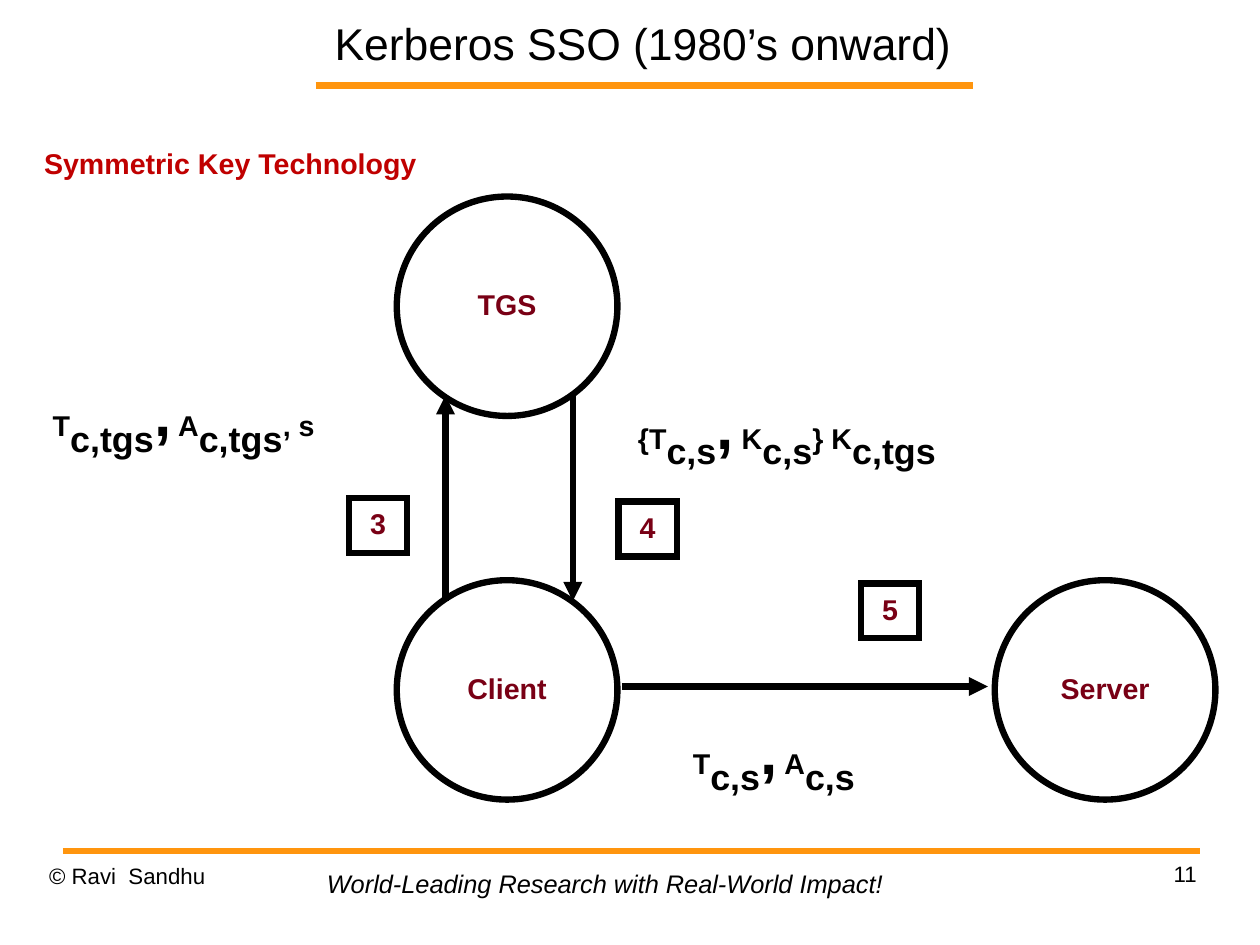
from lxml import etree
from pptx import Presentation
from pptx import util as u
from pptx.dml.color import RGBColor
from pptx.enum import shapes, text
from pptx.oxml import ns

BLACK = RGBColor(0x00, 0x00, 0x00)
ORANGE = RGBColor(0xFF, 0x95, 0x0E)
RED = RGBColor(0xC0, 0x00, 0x00)
MAROON = RGBColor(0x79, 0x00, 0x15)
LEFT, CENTER, RIGHT = text.PP_ALIGN.LEFT, text.PP_ALIGN.CENTER, text.PP_ALIGN.RIGHT
TOP, MIDDLE = text.MSO_ANCHOR.TOP, text.MSO_ANCHOR.MIDDLE
NO_INSET, INSET = (0, 0), (0.11, 0.05)
NORMAL, SUBSCRIPT, LARGE = (18, 0), (39, -25), (39, 0)
CIRCLE_SIZE = (17.51, 23.22)
STEP_SIZE = (4.63, 5.8)


def write(frame, content, size=18, color=BLACK, bold=False, italic=False, align=LEFT,
          anchor=TOP, inset=INSET, spacing=1.0, wrap=False, grow=False):
    frame.word_wrap = wrap
    frame.auto_size = text.MSO_AUTO_SIZE.SHAPE_TO_FIT_TEXT if grow else text.MSO_AUTO_SIZE.NONE
    frame.vertical_anchor = anchor
    frame.margin_left = frame.margin_right = u.Inches(inset[0])
    frame.margin_top = frame.margin_bottom = u.Inches(inset[1])
    paragraph = frame.paragraphs[0]
    paragraph.alignment = align
    paragraph.line_spacing = spacing
    pieces = [(content, (size, 0))] if isinstance(content, str) else content
    for words, (points, baseline) in pieces:
        run = paragraph.add_run()
        run.text = words
        run.font.name = "Arial"
        run.font.size = u.Pt(points)
        run.font.bold = bold
        run.font.italic = italic
        run.font.color.rgb = color
        if baseline:
            run._r.get_or_add_rPr().set("baseline", str(baseline * 1000))


class Deck:
    def __init__(self, width, height):
        self.presentation = Presentation()
        self.presentation.slide_width = width
        self.presentation.slide_height = height
        self.column = width / 100
        self.row = height / 100
        self.slide = self.presentation.slides.add_slide(self.presentation.slide_layouts[5])

    def place(self, *lengths):
        return [round(length * unit) for length, unit in zip(lengths, (self.column, self.row) * 2)]

    def title(self, content, *box, **style):
        shape = self.slide.shapes.title
        shape.left, shape.top, shape.width, shape.height = self.place(*box)
        write(shape.text_frame, content, **style)

    def label(self, content, *box, **style):
        shape = self.slide.shapes.add_textbox(*self.place(*box))
        write(shape.text_frame, content, **style)

    def node(self, kind, content, left, top, size):
        shape = self.slide.shapes.add_shape(kind, *self.place(left, top, *size))
        shape.shadow.inherit = False
        shape.fill.background()
        shape.line.color.rgb = BLACK
        shape.line.width = u.Pt(4)
        etree.SubElement(shape.line._get_or_add_ln(), ns.qn("a:miter"), lim="800000")
        write(shape.text_frame, content, color=MAROON, bold=True, align=CENTER,
              anchor=MIDDLE, spacing=0.9)

    def line(self, *ends, color=BLACK, weight=4, arrow=False):
        connector = self.slide.shapes.add_connector(shapes.MSO_CONNECTOR.STRAIGHT, *self.place(*ends))
        connector.line.color.rgb = color
        connector.line.width = u.Pt(weight)
        if arrow:
            etree.SubElement(connector.line._get_or_add_ln(), ns.qn("a:tailEnd"), type="triangle")
        etree.SubElement(connector._element.spPr, ns.qn("a:effectLst"))


def main():
    deck = Deck(u.Cm(28), u.Cm(21))

    deck.title("Kerberos SSO (1980’s onward)", 21.83, 0, 58.35, 9.07, size=28,
               align=CENTER, anchor=MIDDLE, inset=NO_INSET, wrap=True)
    for left, right, row in ((25.05, 77.22, 9.07), (4.99, 95.25, 90.05)):
        deck.line(left, row, right, row, color=ORANGE, weight=4.31)

    footer = dict(size=14, inset=NO_INSET, spacing=1.01, wrap=True)
    deck.label("© Ravi  Sandhu", 3.9, 91.25, 23.32, 6.89, **footer)
    deck.label("11", 71.66, 91.05, 23.32, 6.89, align=RIGHT, **footer)
    deck.label("World-Leading Research with Real-World Impact!", 25.05, 91.29, 46.1, 4.47,
               size=16, italic=True, inset=(0.1, 0.05), grow=True)
    deck.label("Symmetric Key Technology", 2.45, 14.87, 31.67, 4.84, color=RED, bold=True,
               align=CENTER, inset=(0.1, 0.05), grow=True)

    for name, left, top in (("TGS", 31.49, 20.8), ("Client", 31.49, 61.4), ("Server", 78.95, 61.4)):
        deck.node(shapes.MSO_SHAPE.OVAL, name, left, top, CIRCLE_SIZE)
    for step, left, top in (("3", 27.7, 52.7), ("4", 49.09, 53.08), ("5", 68.33, 61.75)):
        deck.node(shapes.MSO_SHAPE.RECTANGLE, step, left, top, STEP_SIZE)

    for ends in ((35.36, 63.6, 35.36, 41.84), (45.46, 41.72, 45.46, 63.6), (49.36, 72.65, 78.4, 72.65)):
        deck.line(*ends, arrow=True)

    server_key, tgs_key, comma = ("c,s", SUBSCRIPT), ("c,tgs", SUBSCRIPT), (",", LARGE)
    ticket, authenticator = ("T", NORMAL), (" A", NORMAL)
    messages = (
        ([ticket, tgs_key, comma, authenticator, tgs_key, (", s", NORMAL)], 3.18, 39.18, 25.41),
        ([("{T", NORMAL), server_key, comma, (" K", NORMAL), server_key, ("} K", NORMAL), tgs_key],
         49.64, 40.51, 28.4),
        ([ticket, server_key, comma, authenticator, server_key], 53.99, 74.97, 16.61),
    )
    for pieces, left, top, width in messages:
        deck.label(pieces, left, top, width, 8.46, bold=True, spacing=0.9, grow=True)

    deck.presentation.save("out.pptx")


if __name__ == "__main__":
    main()
